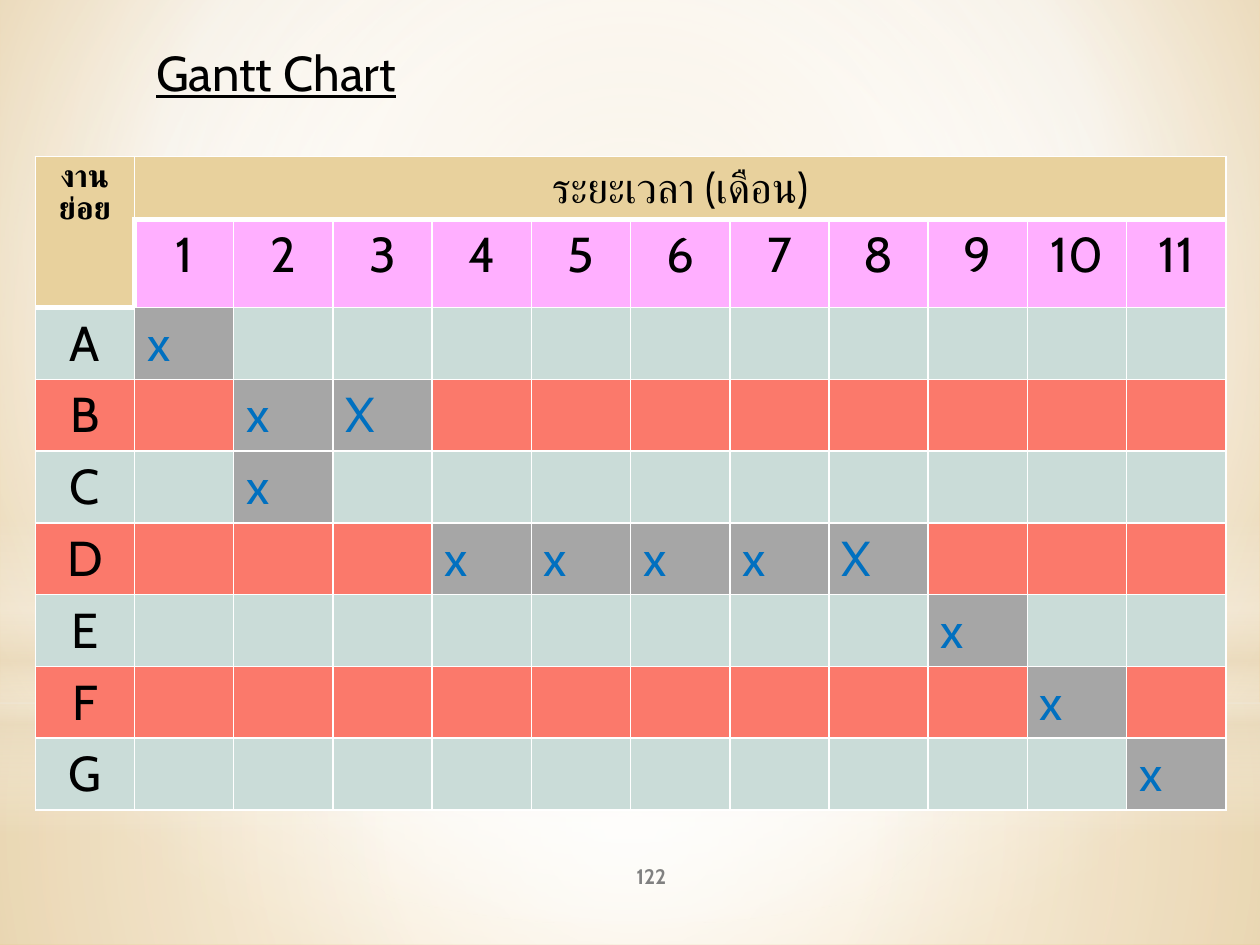
from lxml.etree import SubElement
from pptx import Presentation
from pptx.dml.color import RGBColor
from pptx.enum.shapes import MSO_SHAPE
from pptx.enum.text import MSO_ANCHOR, MSO_AUTO_SIZE, PP_ALIGN
from pptx.oxml.ns import qn
from pptx.util import Inches, Pt


def blend(old, stops, rect=None):
    """Swap a plain fill for a gradient: around rect, or top to bottom."""
    grad = old.makeelement(qn("a:gradFill"), {"rotWithShape": "1"})
    marks = SubElement(grad, qn("a:gsLst"))
    for pos, color, *alpha in stops:
        mark = SubElement(marks, qn("a:gs"), pos=str(pos * 1000))
        tone = SubElement(mark, qn("a:srgbClr"), val=color)
        for part in alpha:
            SubElement(tone, qn("a:alpha"), val=str(part * 1000))
    if rect:
        path = SubElement(grad, qn("a:path"), {"path": "circle"})
        sides = {side: str(n * 1000) for side, n in zip("ltrb", rect)}
        SubElement(path, qn("a:fillToRect"), sides)
    else:
        SubElement(grad, qn("a:lin"), ang="5400000", scaled="0")
    old.getparent().replace(old, grad)


def write(frame, text, align, color="000000", **looks):
    """Put one styled run into a text frame."""
    para = frame.paragraphs[0]
    para.alignment = align
    run = para.add_run()
    run.text = text
    run.font.color.rgb = RGBColor.from_string(color)
    for name, value in {"name": "Cabin", "size": Pt(28), **looks}.items():
        setattr(run.font, name, value)


deck = Presentation()
deck.slide_width, deck.slide_height = Inches(10), Inches(7.5)
slide = deck.slides.add_slide(deck.slide_layouts[6])
LEFT, MID = PP_ALIGN.LEFT, PP_ALIGN.CENTER

# Background
slide.background.fill.solid()
back = slide.element.find(".//" + qn("p:bgPr")).find(qn("a:solidFill"))
blend(back, [(0, "ECD7B0"), (60, "FFFFFF"), (100, "E6BE74")], (20, 10, 20, 60))

# Soft glows over the background
white, sand = "FFFFFF", "EBDDC3"
core = (50, 50, 50, 50)
glows = [
    (MSO_SHAPE.RECTANGLE, 5.58, 1.92, core,
     [(0, white, 91), (37, white, 76), (100, sand, 79)]),
    (MSO_SHAPE.RECTANGLE, 0, 5.58, core,
     [(0, white, 89), (48, white, 62), (100, sand, 79)]),
    (MSO_SHAPE.RECTANGLE, 4.12, 2.5, None,
     [(0, white, 0), (29, white, 30), (45, sand, 40), (55, white, 26),
      (65, sand, 60), (100, white, 0)]),
    (MSO_SHAPE.OVAL, 1.75, 5.58, core, [(0, white), (56, white, 0)]),
]
for kind, top, height, rect, stops in glows:
    glow = slide.shapes.add_shape(kind, 0, Inches(top), Inches(10), Inches(height))
    glow.shadow.inherit = False
    glow.line.fill.background()
    glow.fill.solid()
    blend(glow.element.spPr.find(qn("a:solidFill")), stops, rect)

# Page number
page = slide.shapes.add_textbox(Inches(4.17), Inches(6.75), Inches(2), Inches(0.4))
page.text_frame.word_wrap = True
page.text_frame.vertical_anchor = MSO_ANCHOR.MIDDLE
write(page.text_frame, "122", MID, "808080", size=Pt(12), bold=True)

# Months in which each task runs
tasks = {"A": "x", "B": " xX", "C": " x", "D": "   xxxxX",
         "E": " " * 8 + "x", "F": " " * 9 + "x", "G": " " * 10 + "x"}
months = 11
rows, cols = len(tasks) + 2, months + 1
grid = slide.shapes.add_table(rows, cols, Inches(0.28), Inches(1.24),
                              Inches(9.45), Inches(5.09)).table
for col in grid.columns:
    col.width = Inches(9.45 / cols)
for row, height in zip(grid.rows, [0.5, 0.6] + [0.57] * len(tasks)):
    row.height = Inches(height)

# Cell borders and fills
for r in range(rows):
    for c in range(cols):
        cell = grid.cell(r, c)
        wide = {"L": r == 1 and c == 1, "R": False,
                "T": (r == 1 and c > 0) or (r == 2 and c == 0),
                "B": (r == 0 and c > 0) or (r < 2 and c == 0)}
        props = cell._tc.get_or_add_tcPr()
        for side, thick in wide.items():
            edge = SubElement(props, qn("a:ln" + side), w=str(Pt(3 if thick else 1)))
            SubElement(SubElement(edge, qn("a:solidFill")), qn("a:srgbClr"), val=white)
        if r == 0 or (r == 1 and c == 0):
            color = "E8D19D"
        elif r == 1:
            color = "FFAFFF"
        else:
            color = "FB796B" if r % 2 else "CADCD8"
        cell.fill.solid()
        cell.fill.fore_color.rgb = RGBColor.from_string(color)

# Headings
grid.cell(0, 0).merge(grid.cell(1, 0))
grid.cell(0, 1).merge(grid.cell(0, months))
write(grid.cell(0, 0).text_frame, "งานย่อย", MID, size=Pt(18), bold=True)
write(grid.cell(0, 1).text_frame, "ระยะเวลา (เดือน)", MID, size=Pt(24), bold=False)
for c in range(1, cols):
    write(grid.cell(1, c).text_frame, str(c), MID, bold=False)

# Task names and marks
for r, (task, marks) in enumerate(tasks.items(), 2):
    write(grid.cell(r, 0).text_frame, task, MID, bold=False)
    for c, mark in enumerate(marks, 1):
        if mark != " ":
            cell = grid.cell(r, c)
            cell.fill.fore_color.rgb = RGBColor.from_string("A6A6A6")
            write(cell.text_frame, mark, LEFT, "0070C0", bold=False)

# Title
title = slide.shapes.add_textbox(Inches(1.14), Inches(0.29), Inches(2.28), Inches(0.57))
title.text_frame.word_wrap = False
title.text_frame.auto_size = MSO_AUTO_SIZE.SHAPE_TO_FIT_TEXT
write(title.text_frame, "Gantt Chart", LEFT, underline=True)

deck.save("out.pptx")
